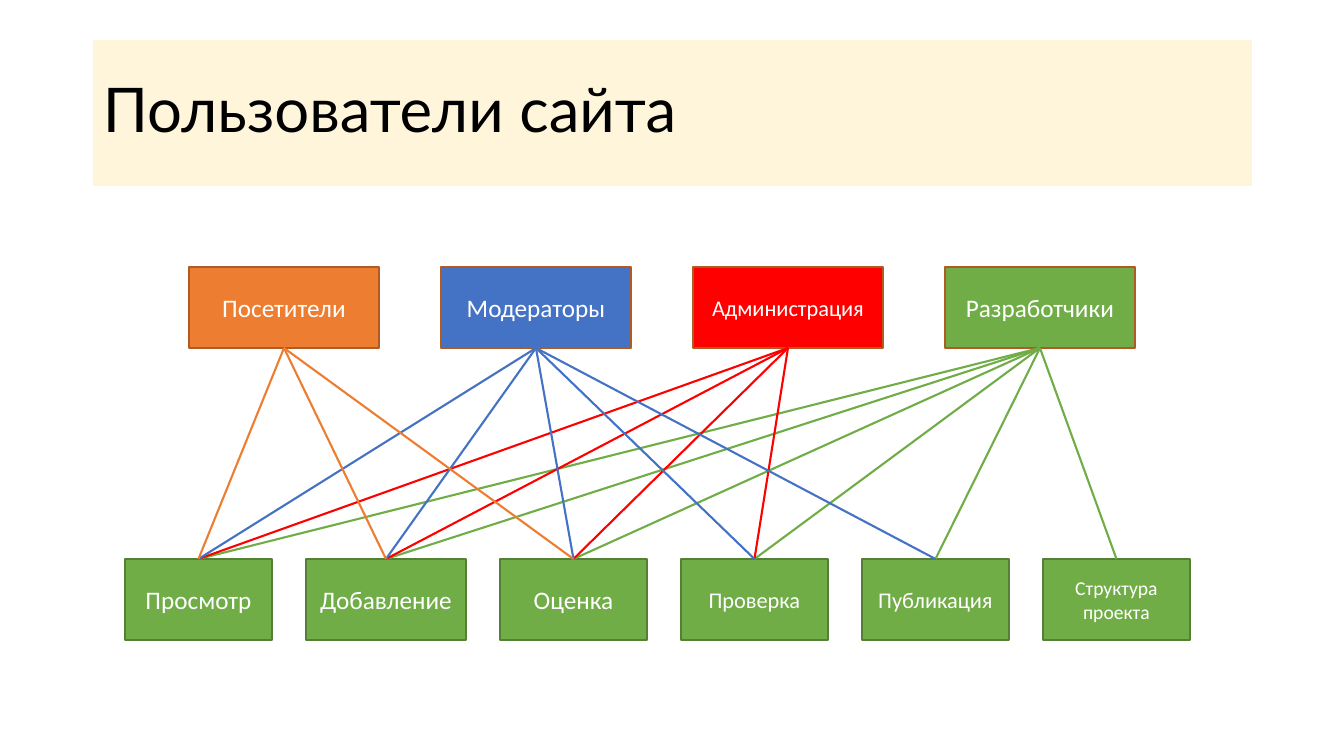
from lxml import etree
from pptx import Presentation
from pptx.dml.color import RGBColor
from pptx.enum.shapes import MSO_CONNECTOR, MSO_SHAPE
from pptx.enum.text import MSO_ANCHOR, PP_ALIGN
from pptx.oxml.ns import qn
from pptx.util import Pt

TITLE = "Пользователи сайта"
ACTIONS = [
    ("Просмотр", 147, 18),
    ("Добавление", 160, 18),
    ("Оценка", 147, 18),
    ("Проверка", 147, 16),
    ("Публикация", 147, 16),
    ("Структура проекта", 147, 14),
]
USERS = [
    ("Посетители", "ED7D31", 18, 3),
    ("Модераторы", "4472C4", 18, 5),
    ("Администрация", "FF0000", 16, 4),
    ("Разработчики", "70AD47", 18, 6),
]
ACTION_FILL, ACTION_LINE, USER_LINE = "70AD47", "538035", "AF5C24"

EMU_PER_PX = 914400 / 100.8
BOX_HEIGHT = 81
USER_LEFT, USER_TOP, USER_WIDTH, USER_STEP = 189, 267, 190, 252
ACTION_LEFT, ACTION_TOP, ACTION_GAP = 125, 559, 34


def px(length):
    return round(length * EMU_PER_PX)


def color(value):
    return RGBColor.from_string(value)


def add_box(shapes, bounds, text, size, fill, line=None,
            font="Calibri", ink="FFFFFF", align=PP_ALIGN.CENTER):
    shape = shapes.add_shape(MSO_SHAPE.RECTANGLE, *map(px, bounds))
    shape.shadow.inherit = False
    shape.fill.solid()
    shape.fill.fore_color.rgb = color(fill)
    if line:
        shape.line.color.rgb = color(line)
        shape.line.width = Pt(1)
    else:
        shape.line.fill.background()
    frame = shape.text_frame
    frame.word_wrap = True
    frame.vertical_anchor = MSO_ANCHOR.MIDDLE
    paragraph = frame.paragraphs[0]
    paragraph.alignment = align
    run = paragraph.add_run()
    run.text = text
    run.font.name = font
    run.font.size = Pt(size)
    run.font.color.rgb = color(ink)
    return shape


def add_link(shapes, user, action, line):
    connector = shapes.add_connector(MSO_CONNECTOR.STRAIGHT, 0, 0, 0, 0)
    connector.begin_connect(user, 2)
    connector.end_connect(action, 0)
    connector.line.color.rgb = color(line)
    connector.line.width = Pt(1.5)
    etree.SubElement(connector._element.spPr, qn("a:effectLst"))


def add_title(slide):
    title = add_box(slide.shapes, (93, 40, 1159, 146), TITLE, 44, "FFF2CC",
                    font="Lato", ink="000000", align=PP_ALIGN.LEFT)
    title.text_frame.paragraphs[0].line_spacing = 0.9
    fill_color = title._element.spPr.find(qn("a:solidFill"))[0]
    etree.SubElement(fill_color, qn("a:alpha")).set("val", "70000")


def add_actions(slide):
    actions = []
    left = ACTION_LEFT
    for text, width, size in ACTIONS:
        bounds = (left, ACTION_TOP, width, BOX_HEIGHT)
        actions.append(add_box(slide.shapes, bounds, text, size,
                               ACTION_FILL, ACTION_LINE))
        left += width + ACTION_GAP
    return actions


def add_users(slide, actions):
    for index, (text, fill, size, allowed) in reversed(list(enumerate(USERS))):
        group = slide.shapes.add_group_shape()
        bounds = (USER_LEFT + index * USER_STEP, USER_TOP, USER_WIDTH, BOX_HEIGHT)
        user = add_box(group.shapes, bounds, text, size, fill, USER_LINE)
        for action in actions[:allowed]:
            add_link(group.shapes, user, action, fill)


def main():
    presentation = Presentation()
    presentation.slide_width = px(1344)
    presentation.slide_height = px(756)
    slide = presentation.slides.add_slide(presentation.slide_layouts[6])
    add_title(slide)
    add_users(slide, add_actions(slide))
    presentation.save("out.pptx")


if __name__ == "__main__":
    main()
